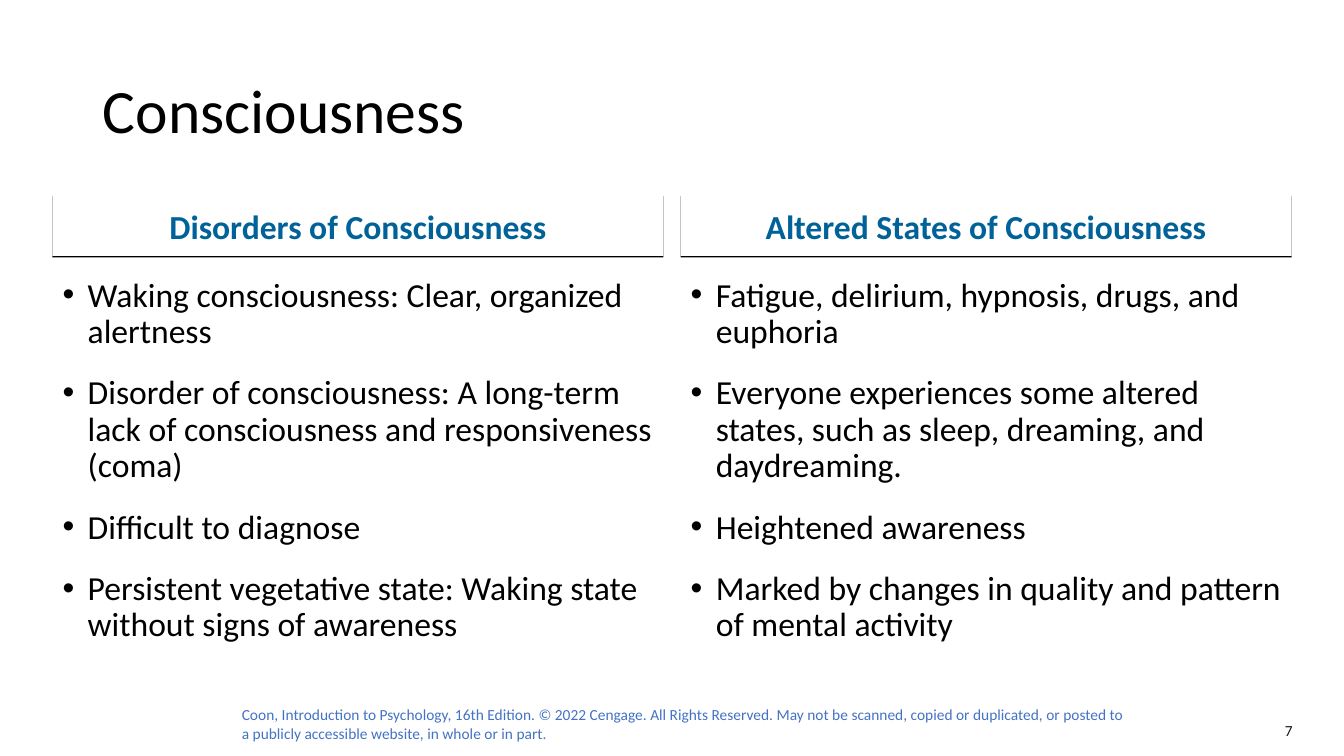
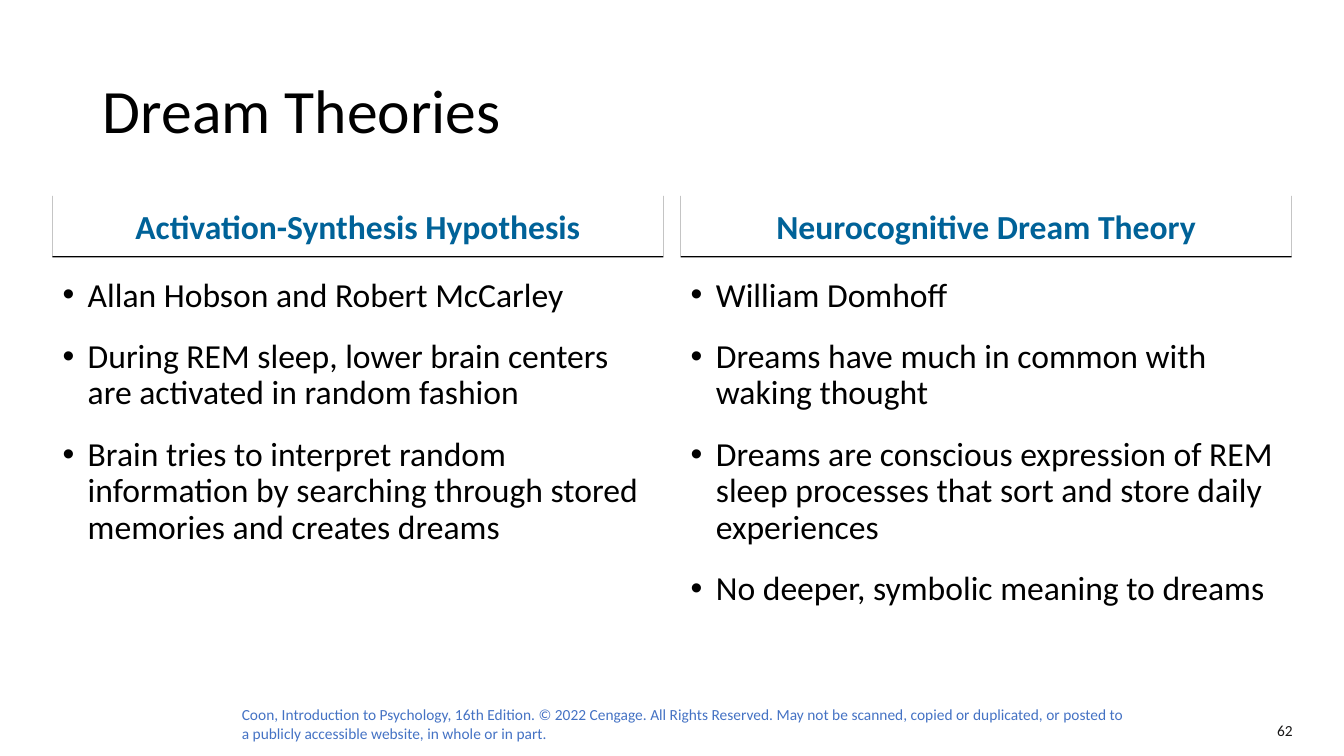
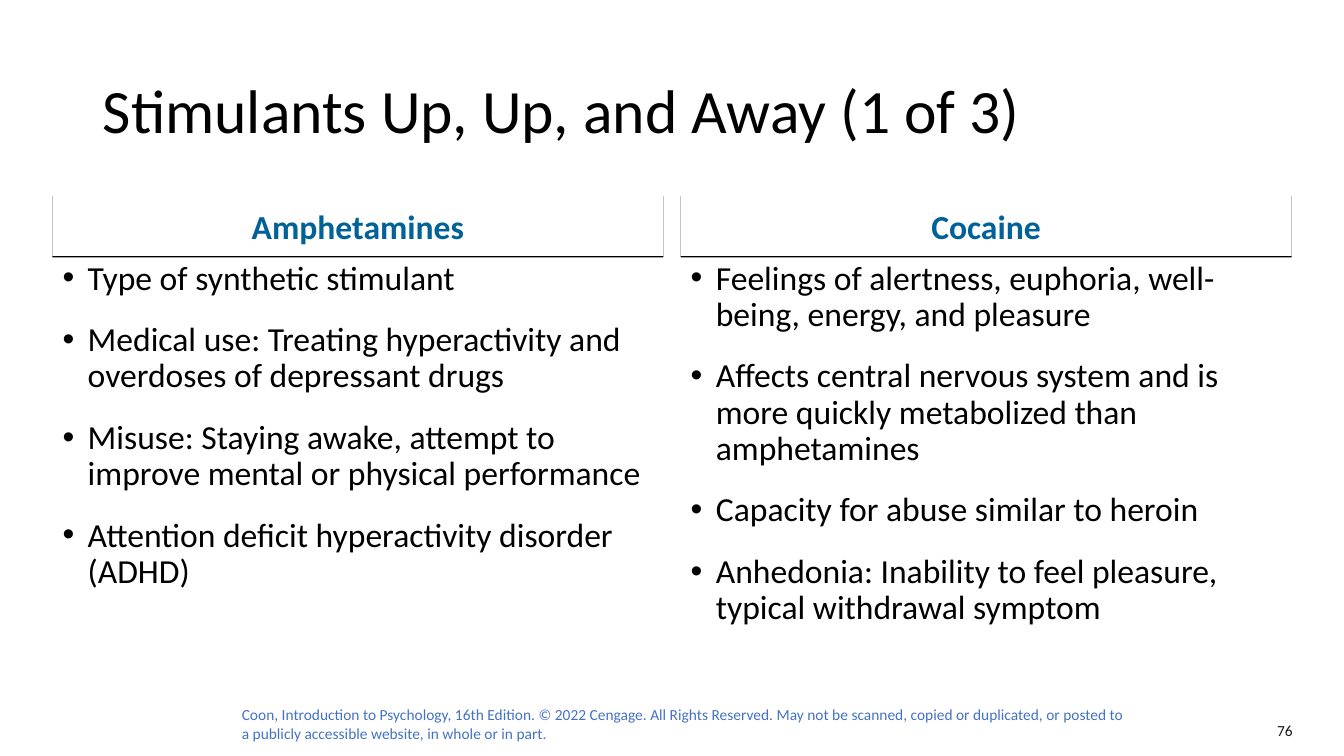
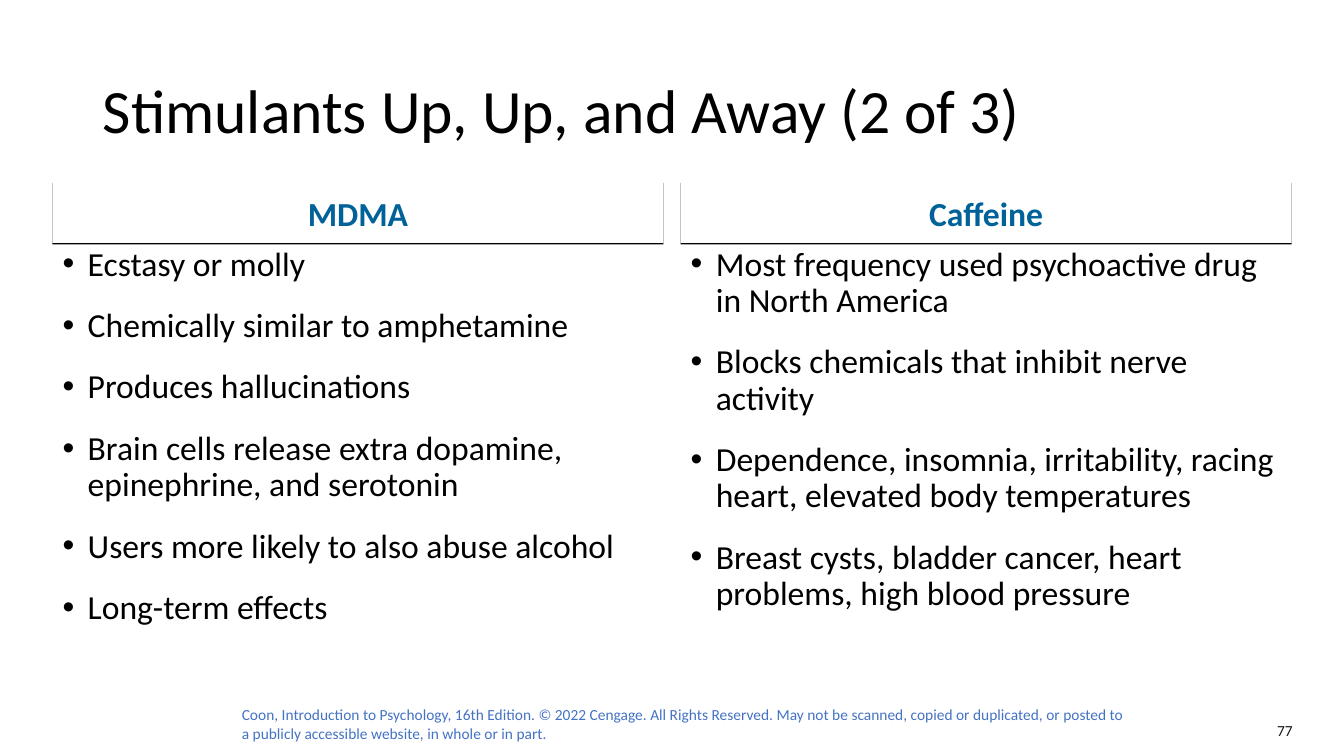
from lxml import etree
from pptx import Presentation
from pptx.dml.color import RGBColor
from pptx.enum.text import MSO_ANCHOR, MSO_AUTO_SIZE, PP_ALIGN
from pptx.oxml.ns import qn
from pptx.util import Pt

LEFT, CENTER, RIGHT = PP_ALIGN.LEFT, PP_ALIGN.CENTER, PP_ALIGN.RIGHT
TOP, MIDDLE, BOTTOM = MSO_ANCHOR.TOP, MSO_ANCHOR.MIDDLE, MSO_ANCHOR.BOTTOM
NO_FIT = MSO_AUTO_SIZE.NONE

# Lengths are px, 100 to the inch
EMU_PER_PX = 9144
SLIDE_W, SLIDE_H = 1333, 750
COMPARISON_LAYOUT = 4
COLUMN_X, COLUMN_W = (52, 675), 606
HEADER_H = 61

# Text styles
FONT = "Calibri"
BLACK, WHITE, BLUE = "000000", "FFFFFF", "006298"
TITLE = {"size": Pt(44), "bold": False, "color": BLACK}
HEADER = {"size": Pt(24), "bold": True, "color": BLUE}
BODY = {"size": Pt(24), "bold": False, "color": BLACK}
NUMBER = {"size": Pt(11), "color": "181717"}
FOOTER = {"size": Pt(11), "color": "4472C4"}

COPYRIGHT = (
    "Coon, Introduction to Psychology, 16th Edition. © 2022 Cengage. "
    "All Rights Reserved. May not be scanned, copied or duplicated, or posted "
    "to a publicly accessible website, in whole or in part."
)

# Each column: header, height of the list, list items
SLIDES = [
    {
        "title": "Consciousness", "number": 7, "header_y": 193, "body_y": 271,
        "columns": [
            ("Disorders of Consciousness", 405, [
                "Waking consciousness: Clear, organized alertness",
                "Disorder of consciousness: A long-term lack of consciousness "
                "and responsiveness (coma)",
                "Difficult to diagnose",
                "Persistent vegetative state: Waking state without signs of awareness",
            ]),
            ("Altered States of Consciousness", 405, [
                "Fatigue, delirium, hypnosis, drugs, and euphoria",
                "Everyone experiences some altered states, such as sleep, "
                "dreaming, and daydreaming.",
                "Heightened awareness",
                "Marked by changes in quality and pattern of mental activity",
            ]),
        ],
    },
    {
        "title": "Dream Theories", "number": 62, "header_y": 193, "body_y": 271,
        "columns": [
            ("Activation-Synthesis Hypothesis", 405, [
                "Allan Hobson and Robert McCarley",
                "During REM sleep, lower brain centers are activated in random fashion",
                "Brain tries to interpret random information by searching through "
                "stored memories and creates dreams",
            ]),
            ("Neurocognitive Dream Theory", 405, [
                "William Domhoff",
                "Dreams have much in common with waking thought",
                "Dreams are conscious expression of REM sleep processes that sort "
                "and store daily experiences",
                "No deeper, symbolic meaning to dreams",
            ]),
        ],
    },
    {
        "title": "Stimulants Up, Up, and Away (1 of 3)", "number": 76,
        "header_y": 193, "body_y": 254,
        "columns": [
            ("Amphetamines", 422, [
                "Type of synthetic stimulant",
                "Medical use: Treating hyperactivity and overdoses of depressant drugs",
                "Misuse: Staying awake, attempt to improve mental or physical "
                "performance",
                "Attention deficit hyperactivity disorder (ADHD)",
            ]),
            ("Cocaine", 422, [
                "Feelings of alertness, euphoria, well-being, energy, and pleasure",
                "Affects central nervous system and is more quickly metabolized "
                "than amphetamines",
                "Capacity for abuse similar to heroin",
                "Anhedonia: Inability to feel pleasure, typical withdrawal symptom",
            ]),
        ],
    },
    {
        "title": "Stimulants Up, Up, and Away (2 of 3)", "number": 77,
        "header_y": 180, "body_y": 240,
        "columns": [
            ("MDMA", 458, [
                "Ecstasy or molly",
                "Chemically similar to amphetamine",
                "Produces hallucinations",
                "Brain cells release extra dopamine, epinephrine, and serotonin",
                "Users more likely to also abuse alcohol",
                "Long-term effects",
            ]),
            ("Caffeine", 435, [
                "Most frequency used psychoactive drug in North America",
                "Blocks chemicals that inhibit nerve activity",
                "Dependence, insomnia, irritability, racing heart, elevated body "
                "temperatures",
                "Breast cysts, bladder cancer, heart problems, high blood pressure",
            ]),
        ],
    },
]


def px(n):
    return n * EMU_PER_PX


def rgb(value):
    return RGBColor.from_string(value)


def place(sp, x, y, w, h):
    sp.left, sp.top, sp.width, sp.height = px(x), px(y), px(w), px(h)


def write(sp, lines, style, align=LEFT, anchor=TOP, spacing=1.0, inset_y=5):
    """Fill a shape with one styled run per paragraph."""
    tf = sp.text_frame
    frame_format = {
        "word_wrap": True, "auto_size": NO_FIT, "vertical_anchor": anchor,
        "margin_left": px(10), "margin_right": px(10),
        "margin_top": px(inset_y), "margin_bottom": px(inset_y),
    }
    for name, value in frame_format.items():
        setattr(tf, name, value)
    for i, line in enumerate(lines):
        p = tf.add_paragraph() if i else tf.paragraphs[0]
        p.alignment, p.line_spacing, p.space_before = align, spacing, Pt(0)
        r = p.add_run()
        r.text = line
        r.font.name = FONT
        for name, value in style.items():
            if name == "color":
                r.font.color.rgb = rgb(value)
            else:
                setattr(r.font, name, value)


def add_bullets(sp):
    for i, p in enumerate(sp.text_frame.paragraphs):
        pPr = p._p.get_or_add_pPr()
        pPr.set("marL", str(px(25)))
        pPr.set("indent", str(px(-25)))
        etree.SubElement(pPr, qn("a:buFont")).set("typeface", "Arial")
        etree.SubElement(pPr, qn("a:buChar")).set("char", "•")
        p.space_before, p.space_after = Pt(10 if i else 0), Pt(8)


def add_underline_shadow(sp):
    """A hard shadow one point below the shape draws its lower rule."""
    effects = etree.SubElement(sp._element.spPr, qn("a:effectLst"))
    shadow = etree.SubElement(effects, qn("a:outerShdw"), blurRad="0",
                              dist=str(Pt(1)), dir="5400000", algn="t",
                              rotWithShape="0")
    etree.SubElement(shadow, qn("a:srgbClr"), val=BLACK)


def fill_title(s, text):
    sp = s.shapes.title
    place(sp, 92, 40, 1150, 145)
    write(sp, [text], TITLE, anchor=MIDDLE, spacing=0.9)


def fill_header(sp, x, y, text):
    place(sp, x, y, COLUMN_W, HEADER_H)
    sp.fill.solid()
    sp.fill.fore_color.rgb = rgb(WHITE)
    add_underline_shadow(sp)
    write(sp, [text], HEADER, align=CENTER, anchor=BOTTOM, inset_y=10)


def fill_list(sp, x, y, h, items):
    place(sp, x, y, COLUMN_W, h)
    write(sp, items, BODY, spacing=0.9)
    add_bullets(sp)


def add_text(s, x, y, w, h, text, style, **layout):
    sp = s.shapes.add_textbox(px(x), px(y), px(w), px(h))
    write(sp, [text], style, **layout)


def add_footer(s, number):
    add_text(s, 1212, 705, 80, 40, str(number), NUMBER, align=RIGHT, anchor=MIDDLE)
    add_text(s, 230, 695, 906, 66, COPYRIGHT, FOOTER)


def add_comparison(prs, title, number, header_y, body_y, columns):
    s = prs.slides.add_slide(prs.slide_layouts[COMPARISON_LAYOUT])
    fill_title(s, title)
    # Placeholders 1 and 3 are headers, 2 and 4 the lists below them
    for i, (x, (header, h, items)) in enumerate(zip(COLUMN_X, columns)):
        fill_header(s.placeholders[2 * i + 1], x, header_y, header)
        fill_list(s.placeholders[2 * i + 2], x, body_y, h, items)
    add_footer(s, number)


def main():
    prs = Presentation()
    prs.slide_width, prs.slide_height = px(SLIDE_W), px(SLIDE_H)
    for content in SLIDES:
        add_comparison(prs, **content)
    prs.save("out.pptx")


if __name__ == "__main__":
    main()
